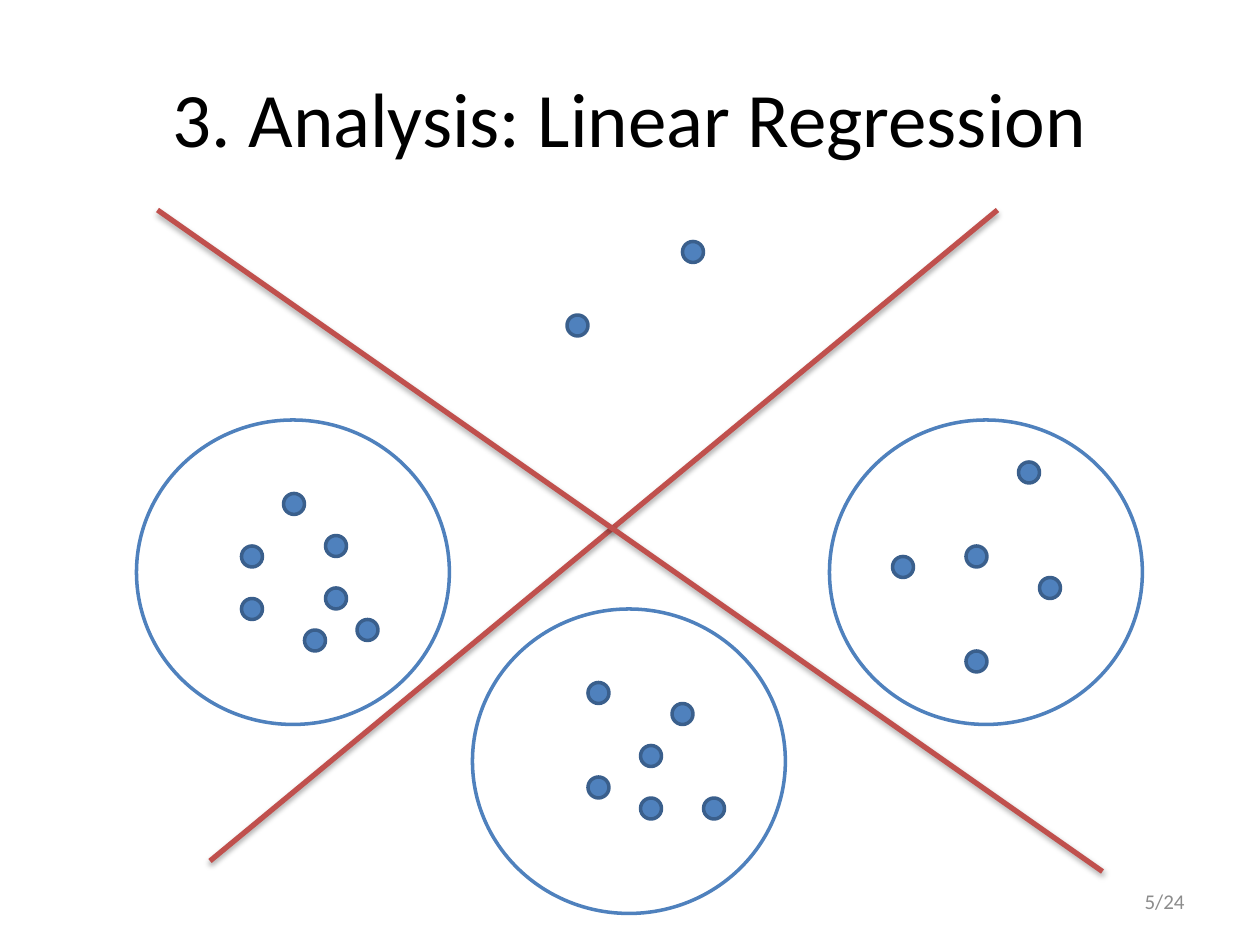
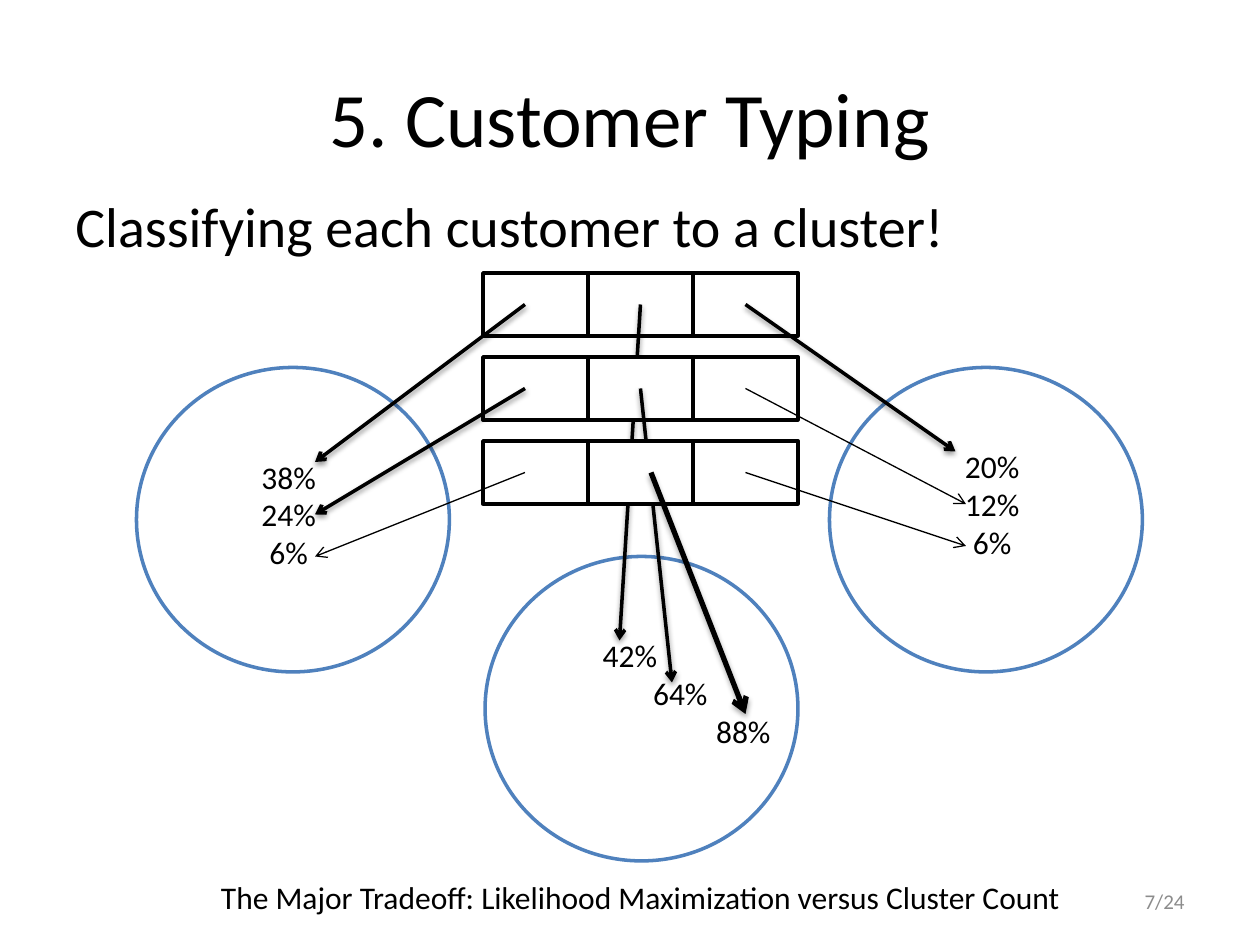
from dataclasses import dataclass
from typing import NamedTuple

import pptx
import pptx.dml.color
import pptx.enum.shapes
import pptx.enum.text
import pptx.oxml
import pptx.oxml.ns
import pptx.slide
import pptx.text.text
import pptx.util

COLS, ROWS = 120, 90
WIDTH, HEIGHT = pptx.util.Inches(10), pptx.util.Inches(7.5)
SHAPE = pptx.enum.shapes.MSO_SHAPE
ALIGN = pptx.enum.text.PP_ALIGN
ANCHOR = pptx.enum.text.MSO_ANCHOR


@dataclass(frozen=True)
class Theme:
    font: str = "Calibri"
    black: str = "000000"
    white: str = "FFFFFF"
    blue: str = "4F81BD"
    edge: str = "3A5F8C"
    red: str = "C0504D"
    gray: str = "8C8C8C"
    title: int = 44
    lead: int = 32
    label: int = 18
    page: int = 12
    thin: float = 0.75
    line: float = 2
    bold: float = 3


class Box(NamedTuple):
    """Left, top, width and height in grid columns and rows."""
    x: float
    y: float
    w: float
    h: float


class Link(NamedTuple):
    """A straight line between two grid points."""
    x1: float
    y1: float
    x2: float
    y2: float
    weight: float


class Shade(NamedTuple):
    """Shadow opacity in percent, blur and distance in points."""
    alpha: int
    blur: float
    dist: float


THEME = Theme()
SHADES = {THEME.line: Shade(38, 3.1, 1.6), THEME.bold: Shade(35, 3.1, 1.8)}


# Grid and colour helpers
def col(n: float) -> int:
    return round(WIDTH * n / COLS)


def row(n: float) -> int:
    return round(HEIGHT * n / ROWS)


def place(box: Box) -> tuple:
    return col(box.x), row(box.y), col(box.w), row(box.h)


def rgb(code: str) -> pptx.dml.color.RGBColor:
    return pptx.dml.color.RGBColor.from_string(code)


# Text
def write(frame: pptx.text.text.TextFrame, text: str, *, size: float,
          color: str = THEME.black, align: ALIGN = ALIGN.CENTER,
          anchor: ANCHOR = ANCHOR.TOP, shifts: tuple = ()) -> None:
    """Fill a frame; shifts are left indents in inches, one a paragraph."""
    frame.word_wrap = True
    frame.vertical_anchor = anchor
    frame.text = text
    for para in frame.paragraphs:
        para.alignment = align
        para.font.name = THEME.font
        para.font.size = pptx.util.Pt(size)
        para.font.color.rgb = rgb(color)
    for para, shift in zip(frame.paragraphs, shifts):
        props = para._p.get_or_add_pPr()
        props.set("marL", str(pptx.util.Inches(shift)))
        props.set("indent", "0")


def label(slide: pptx.slide.Slide, box: Box, text: str, **style) -> None:
    write(slide.shapes.add_textbox(*place(box)).text_frame, text, **style)


# Shapes and lines
def draw(slide: pptx.slide.Slide, kind: SHAPE, box: Box, edge: str,
         fill: str = "") -> None:
    shape = slide.shapes.add_shape(kind, *place(box))
    shape.shadow.inherit = False
    shape.line.color.rgb = rgb(edge)
    shape.line.width = pptx.util.Pt(THEME.line)
    if fill:
        shape.fill.solid()
        shape.fill.fore_color.rgb = rgb(fill)
    else:
        shape.fill.background()


def join(slide: pptx.slide.Slide, link: Link, color: str,
         arrow: bool = False) -> None:
    line = slide.shapes.add_connector(
        pptx.enum.shapes.MSO_CONNECTOR.STRAIGHT,
        col(link.x1), row(link.y1), col(link.x2), row(link.y2))
    line.line.color.rgb = rgb(color)
    line.line.width = pptx.util.Pt(link.weight)
    space = pptx.oxml.ns.nsdecls("a")
    if arrow:
        head = pptx.oxml.parse_xml(f'<a:tailEnd {space} type="arrow"/>')
        line.line._get_or_add_ln().append(head)
    shade = SHADES.get(link.weight)
    inner = "" if shade is None else (
        f'<a:outerShdw blurRad="{pptx.util.Pt(shade.blur)}" '
        f'dist="{pptx.util.Pt(shade.dist)}" dir="5400000" rotWithShape="0">'
        f'<a:srgbClr val="{THEME.black}"><a:alpha val="{shade.alpha * 1000}"/>'
        '</a:srgbClr></a:outerShdw>')
    line._element.spPr.append(pptx.oxml.parse_xml(
        f'<a:effectLst {space}>{inner}</a:effectLst>'))


def rings(slide: pptx.slide.Slide, spots: tuple) -> None:
    for x, y in spots:
        draw(slide, SHAPE.OVAL, Box(x, y, 29.8, 29), THEME.blue)


# Parts every slide shares
def start(deck, title: str, page: str) -> pptx.slide.Slide:
    slide = deck.slides.add_slide(deck.slide_layouts.get_by_name("Title Only"))
    head = slide.shapes.title
    head.left, head.top, head.width, head.height = place(
        Box(6, 3.6, 108, 15))
    write(head.text_frame, title, size=THEME.title, anchor=ANCHOR.MIDDLE)
    label(slide, Box(86, 83.4, 28, 4.8), page, size=THEME.page,
          color=THEME.gray, align=ALIGN.RIGHT, anchor=ANCHOR.MIDDLE)
    return slide


# Slide: points split into clusters by two lines
DOTS = (
    (23, 57), (31, 56), (27, 47), (34, 59), (29, 60), (31, 51), (23, 52),
    (56, 74), (67, 76), (56, 65), (64, 67), (61, 71), (61, 76),
    (92, 52), (97, 44), (85, 53), (99, 55), (92, 62),
    (65, 23), (54, 30),
)
SPLITS = (Link(95, 20, 20, 82, THEME.bold), Link(15, 20, 105, 83, THEME.bold))


def regress(deck) -> None:
    slide = start(deck, "3. Analysis: Linear Regression", "5/24")
    for x, y in DOTS:
        draw(slide, SHAPE.OVAL, Box(x, y, 2, 2), THEME.edge, THEME.blue)
    rings(slide, ((13, 40), (45, 58), (79, 40)))
    for split in SPLITS:
        join(slide, split, THEME.red)


# Slide: customers with their odds for each cluster
ODDS = (
    (Box(15, 43, 25, 12), "38%\n24%\n6%", ()),
    (Box(82, 42, 25, 12), "20%\n12%\n6%", ()),
    (Box(45, 60, 30, 12), "42%\n64%\n88%", (0, 0.8, 1.8)),
)
# One row of arrows per customer: start column, end point, weight
PULLS = (
    ((50, 30, 44, THEME.line), (61, 59, 61, THEME.line),
     (71, 91, 43, THEME.line)),
    ((50, 30, 49, THEME.line), (61, 64, 65, THEME.line),
     (71, 92, 48, THEME.thin)),
    ((50, 30, 53, THEME.thin), (62, 71, 68, THEME.bold),
     (71, 92, 52, THEME.thin)),
)


def typing(deck) -> None:
    slide = start(deck, "5. Customer Typing", "7/24")
    label(slide, Box(6, 17.64, 108, 8), "Classifying each customer to a cluster!",
          size=THEME.lead, align=ALIGN.LEFT)
    rings(slide, ((13, 35), (46.2, 53), (79, 35)))
    for box, text, shifts in ODDS:
        label(slide, box, text, size=THEME.label, shifts=shifts)
    for rank, pulls in enumerate(PULLS):
        top = 26 + 8 * rank
        for x, w in ((46, 30), (56, 10)):
            draw(slide, SHAPE.RECTANGLE, Box(x, top, w, 6),
                 THEME.black, THEME.white)
        for x, endx, endy, weight in pulls:
            join(slide, Link(x, top + 3, endx, endy, weight),
                 THEME.black, arrow=True)
    label(slide, Box(9, 83, 104, 4.8),
          "The Major Tradeoff: Likelihood Maximization versus Cluster Count",
          size=THEME.label)


def main() -> None:
    deck = pptx.Presentation()
    deck.slide_width, deck.slide_height = WIDTH, HEIGHT
    regress(deck)
    typing(deck)
    deck.save("out.pptx")


if __name__ == "__main__":
    main()
